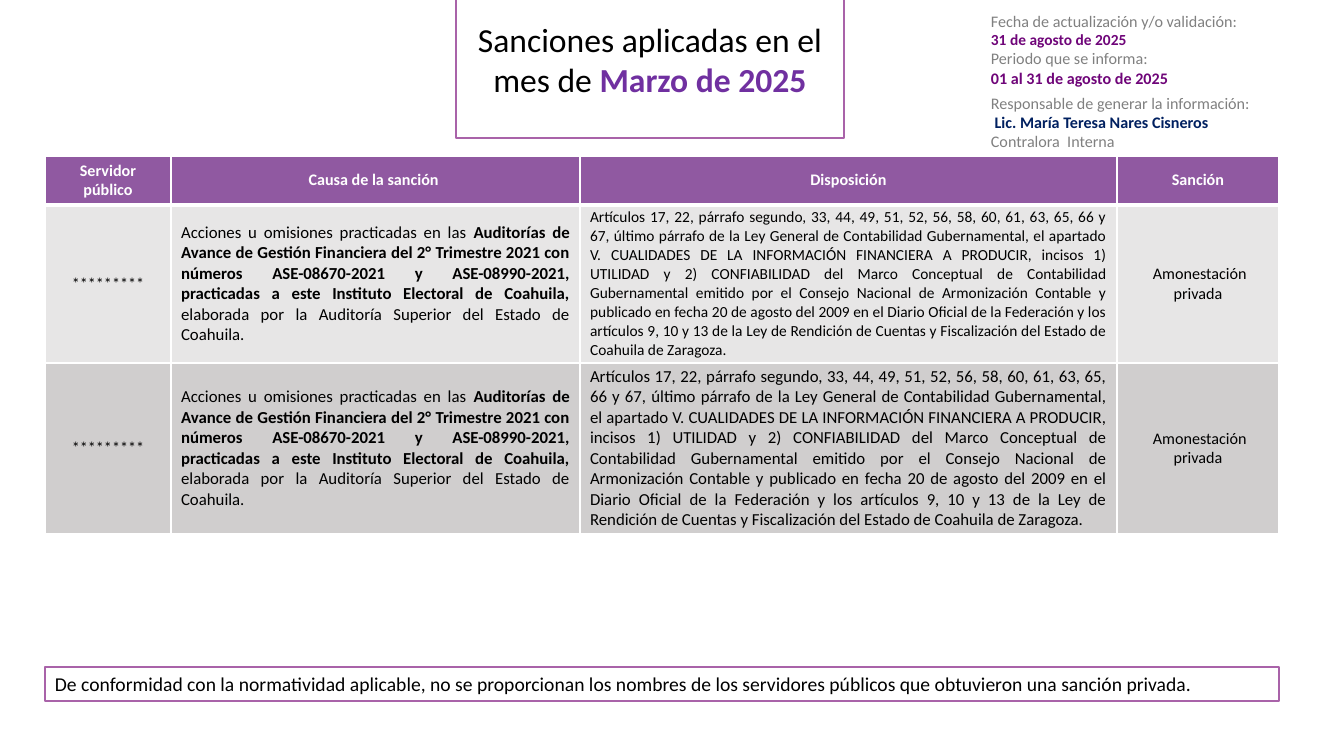
"""Build the slide of sanctions applied in March 2025."""
from dataclasses import dataclass
from lxml.etree import SubElement
from pptx import Presentation
from pptx.dml.color import RGBColor as Rgb
from pptx.enum.shapes import MSO_SHAPE as Kind
from pptx.enum.text import MSO_ANCHOR as Anchor, MSO_AUTO_SIZE as Fit, PP_ALIGN as Align
from pptx.oxml import parse_xml
from pptx.oxml.ns import nsdecls, qn
from pptx.util import Emu, Pt

SCALE = 914400 / 100.8


@dataclass(frozen=True)
class Theme:
    """Colours and type sizes."""
    font: str = "Calibri"
    white: str = "FFFFFF"
    black: str = "000000"
    edge: str = "A963A9"
    head: str = "9059A1"
    month: str = "7030A0"
    date: str = "6F0579"
    name: str = "002060"
    gray: str = "808080"
    bands: tuple[str, str] = ("E7E6E6", "D0CECE")
    title: float = 24
    foot: float = 14
    cause: float = 12
    rules: tuple[float, float] = (11, 12)
    small: float = 11.5
    date_size: float = 11


@dataclass(frozen=True)
class Run:
    """Text with its own format; None takes the paragraph's."""
    text: str
    color: str | None = None
    bold: bool = False
    size: float | None = None


@dataclass(frozen=True)
class Box:
    """Place and size in px."""
    left: int
    top: int
    width: int
    height: int

    def emu(self) -> list[Emu]:
        """Give the four lengths in EMU."""
        return [px(n) for n in (self.left, self.top, self.width, self.height)]


@dataclass(frozen=True)
class Note:
    """A text box beside the title."""
    box: Box
    lines: list[list[Run]]


THEME = Theme()
TITLE = Box(456, 13, 388, 92)
FOOT = Box(45, 667, 1234, 34)
TABLE = Box(45, 156, 1234, 378)
COLS = (126, 409, 537, 162)
ROWS = (49, 158, 171)
HEADS = ("Servidor público", "Causa de la sanción ", "Disposición", "Sanción")
CAUSE = [
    Run("Acciones u omisiones practicadas en las "),
    Run("Auditorías de Avance de Gestión Financiera del 2° Trimestre 2021 con "
        "números ASE-08670-2021 y ASE-08990-2021, practicadas a este Instituto "
        "Electoral de Coahuila, ", bold=True),
    Run("elaborada por la Auditoría Superior del Estado de Coahuila."),
]
RULE = (
    "Artículos 17, 22, párrafo segundo, 33, 44, 49, 51, 52, 56, 58, 60, 61, 63, 65, "
    "66 y 67, último párrafo de la Ley General de Contabilidad Gubernamental, el "
    "apartado V. CUALIDADES DE LA INFORMACIÓN FINANCIERA A PRODUCIR, incisos 1) "
    "UTILIDAD y 2) CONFIABILIDAD del Marco Conceptual de Contabilidad Gubernamental "
    "emitido por el Consejo Nacional de Armonización Contable y publicado en fecha 20 "
    "de agosto del 2009 en el Diario Oficial de la Federación y los artículos 9, 10 y "
    "13 de la Ley de Rendición de Cuentas y Fiscalización del Estado de Coahuila de "
    "Zaragoza."
)
NOTES = (
    Note(Box(981, 6, 273, 107), [
        [Run("Fecha de actualización y/o validación:")],
        [Run("31 de agosto de 2025", THEME.date, True, THEME.date_size)],
        [Run("Periodo que se informa:")],
        [Run("01 al 31 de agosto de 2025", THEME.date, True)],
    ]),
    Note(Box(981, 88, 298, 69), [
        [Run("Responsable de generar la información:")],
        [Run(" "), Run("Lic. María Teresa Nares Cisneros", THEME.name, True)],
        [Run("Contralora  Interna")],
    ]),
)


def px(n: int) -> Emu:
    """Turn px into EMU."""
    return Emu(round(n * SCALE))


def write(frame, lines: list[list[Run]], *, size: float, color: str = THEME.black,
          bold: bool = False, align: Align = Align.LEFT) -> None:
    """Fill a text frame, one paragraph a line."""
    frame.word_wrap = True
    for i, line in enumerate(lines):
        para = frame.add_paragraph() if i else frame.paragraphs[0]
        para.alignment = align
        for part in line:
            run = para.add_run()
            run.text = part.text
            font = run.font
            font.name = THEME.font
            font.size = Pt(part.size or size)
            font.bold = bold or part.bold
            font.color.rgb = Rgb.from_string(part.color or color)


def frame_box(shape) -> None:
    """Give a shape a white fill and a thin purple line."""
    shape.fill.solid()
    shape.fill.fore_color.rgb = Rgb.from_string(THEME.white)
    shape.line.color.rgb = Rgb.from_string(THEME.edge)
    shape.line.width = Pt(1)
    shape.text_frame.auto_size = Fit.SHAPE_TO_FIT_TEXT


def rule_cell(cell, base: float) -> None:
    """Draw the white borders of a cell, with its own bottom width."""
    props = cell._tc.get_or_add_tcPr()
    for i, side in enumerate("LRTB"):
        width = Pt(base if side == "B" else 1)
        line = parse_xml(f'<a:ln{side} {nsdecls("a")} w="{width}"/>')
        fill = SubElement(line, qn("a:solidFill"))
        SubElement(fill, qn("a:srgbClr"), val=THEME.white)
        props.insert(i, line)


def fill_cell(cell, runs: list[Run], back: str, *, base: float = 1, **form) -> None:
    """Write and paint one table cell."""
    cell.vertical_anchor = Anchor.MIDDLE
    cell.margin_top = cell.margin_bottom = px(3)
    cell.fill.solid()
    cell.fill.fore_color.rgb = Rgb.from_string(back)
    rule_cell(cell, base)
    write(cell.text_frame, [runs], **form)


def add_grid(slide) -> None:
    """Add the table of sanctions."""
    grid = slide.shapes.add_table(len(ROWS), len(COLS), *TABLE.emu()).table
    for col, width in zip(grid.columns, COLS):
        col.width = px(width)
    for row, height in zip(grid.rows, ROWS):
        row.height = px(height)
    for i, head in enumerate(HEADS):
        fill_cell(grid.cell(0, i), [Run(head)], THEME.head, base=3, size=THEME.small,
                  color=THEME.white, bold=True, align=Align.CENTER)
    for j, (back, size) in enumerate(zip(THEME.bands, THEME.rules), 1):
        cells = (
            ([Run("*********")], THEME.small, Align.CENTER),
            (CAUSE, THEME.cause, Align.JUSTIFY),
            ([Run(RULE)], size, Align.JUSTIFY),
            ([Run(" Amonestación privada")], THEME.small, Align.CENTER),
        )
        for i, (runs, point, align) in enumerate(cells):
            fill_cell(grid.cell(j, i), runs, back, size=point, align=align)


def main() -> None:
    """Build and save the slide."""
    deck = Presentation()
    deck.slide_width, deck.slide_height = px(1344), px(756)
    slide = deck.slides.add_slide(deck.slide_layouts[5])

    title = slide.shapes.title
    title.left, title.top, title.width, title.height = TITLE.emu()
    frame_box(title)
    write(title.text_frame, [[Run("Sanciones aplicadas en el mes de "),
                              Run("Marzo de 2025", THEME.month, True)]],
          size=THEME.title, align=Align.CENTER)

    foot = slide.shapes.add_shape(Kind.RECTANGLE, *FOOT.emu())
    foot.shadow.inherit = False
    frame_box(foot)
    write(foot.text_frame, [[Run(
        "De conformidad con la normatividad aplicable, no se proporcionan los nombres "
        "de los servidores públicos que obtuvieron una sanción privada.")]],
        size=THEME.foot)

    add_grid(slide)
    for note in NOTES:
        area = slide.shapes.add_textbox(*note.box.emu())
        write(area.text_frame, note.lines, size=THEME.small, color=THEME.gray)
    deck.save("out.pptx")


if __name__ == "__main__":
    main()
